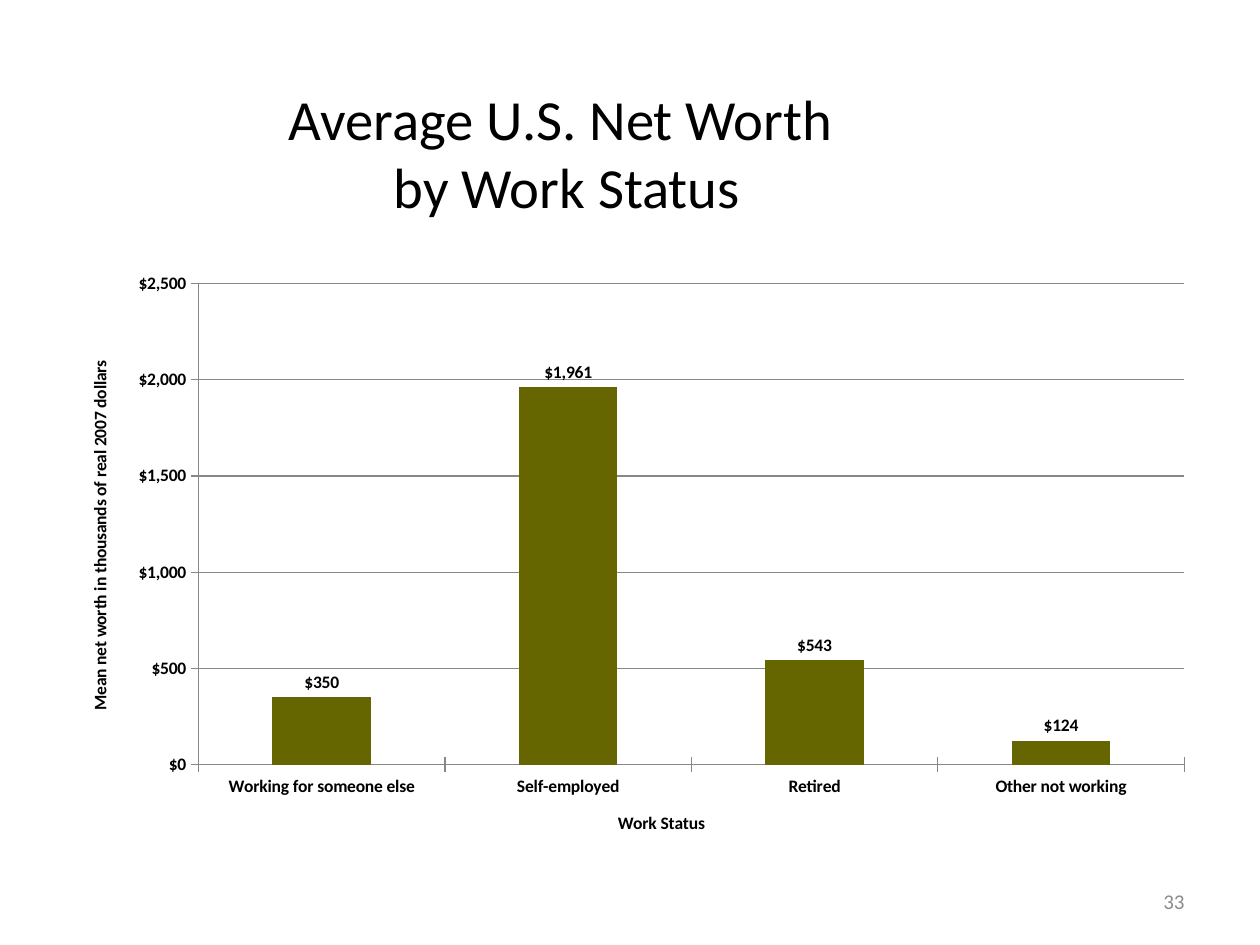
import pptx
import pptx.chart.data
import pptx.dml.color
import pptx.enum.chart
import pptx.enum.text
import pptx.util

COLORS = {"text": "000000", "number": "8C8C8C", "bar": "666600", "line": "878787"}
DOLLARS = '"$"#,##0'


def color(name):
    return pptx.dml.color.RGBColor.from_string(COLORS[name])


class SlideBuilder:
    font_name = "Calibri"

    def __init__(self, presentation):
        self.width = presentation.slide_width
        self.height = presentation.slide_height
        self.slide = presentation.slides.add_slide(presentation.slide_layouts[6])

    def place(self, left, top, width, height):
        return (round(left * self.width), round(top * self.height),
                round(width * self.width), round(height * self.height))

    def style(self, font, size, color_name="text", bold=False):
        font.name = self.font_name
        font.size = pptx.util.Pt(size)
        font.bold = bold
        font.color.rgb = color(color_name)

    def text(self, content, box, size, alignment, color_name="text"):
        shape = self.slide.shapes.add_textbox(*self.place(*box))
        frame = shape.text_frame
        frame.word_wrap = True
        frame.vertical_anchor = pptx.enum.text.MSO_ANCHOR.MIDDLE
        paragraph = frame.paragraphs[0]
        paragraph.text = content
        paragraph.alignment = alignment
        self.style(paragraph.font, size, color_name)

    def axis(self, axis, title):
        axis.major_tick_mark = pptx.enum.chart.XL_TICK_MARK.CROSS
        axis.format.line.color.rgb = color("line")
        self.style(axis.tick_labels.font, 10, bold=True)
        frame = axis.axis_title.text_frame
        frame.text = title
        self.style(frame.paragraphs[0].font, 10, bold=True)

    def column_chart(self, values, box, category_title, value_title):
        data = pptx.chart.data.CategoryChartData(number_format=DOLLARS)
        data.categories = list(values)
        data.add_series("Series 1", list(values.values()))
        chart = self.slide.shapes.add_chart(
            pptx.enum.chart.XL_CHART_TYPE.COLUMN_CLUSTERED, *self.place(*box), data).chart
        chart.has_legend = False
        chart.has_title = False
        self.style(chart.font, 10)
        self.axis(chart.category_axis, category_title)
        self.axis(chart.value_axis, value_title)
        chart.value_axis.tick_labels.number_format = DOLLARS
        chart.value_axis.tick_labels.number_format_is_linked = False
        chart.value_axis.major_gridlines.format.line.color.rgb = color("line")
        plot = chart.plots[0]
        plot.gap_width = 150
        plot.vary_by_categories = False
        series = plot.series[0]
        series.format.fill.solid()
        series.format.fill.fore_color.rgb = color("bar")
        labels = series.data_labels
        labels.show_value = True
        labels.number_format = DOLLARS
        labels.number_format_is_linked = False
        labels.position = pptx.enum.chart.XL_LABEL_POSITION.OUTSIDE_END
        self.style(labels.font, 10, bold=True)


def main():
    presentation = pptx.Presentation()
    presentation.slide_width = pptx.util.Inches(10)
    presentation.slide_height = pptx.util.Inches(7.5)
    builder = SlideBuilder(presentation)
    alignments = pptx.enum.text.PP_ALIGN
    builder.text("33", (0.717, 0.927, 0.233, 0.053), 12, alignments.RIGHT, "number")
    builder.text("Average U.S. Net Worth \vby Work Status", (0, 0.077, 0.9, 0.167),
                 32.4, alignments.CENTER)
    net_worth = {"Working for someone else": 350, "Self-employed": 1961,
                 "Retired": 543, "Other not working": 124}
    builder.column_chart(net_worth, (0.05, 0.277, 0.908, 0.633), "Work Status",
                         "Mean net worth in thousands of real 2007 dollars")
    presentation.save("out.pptx")


if __name__ == "__main__":
    main()
